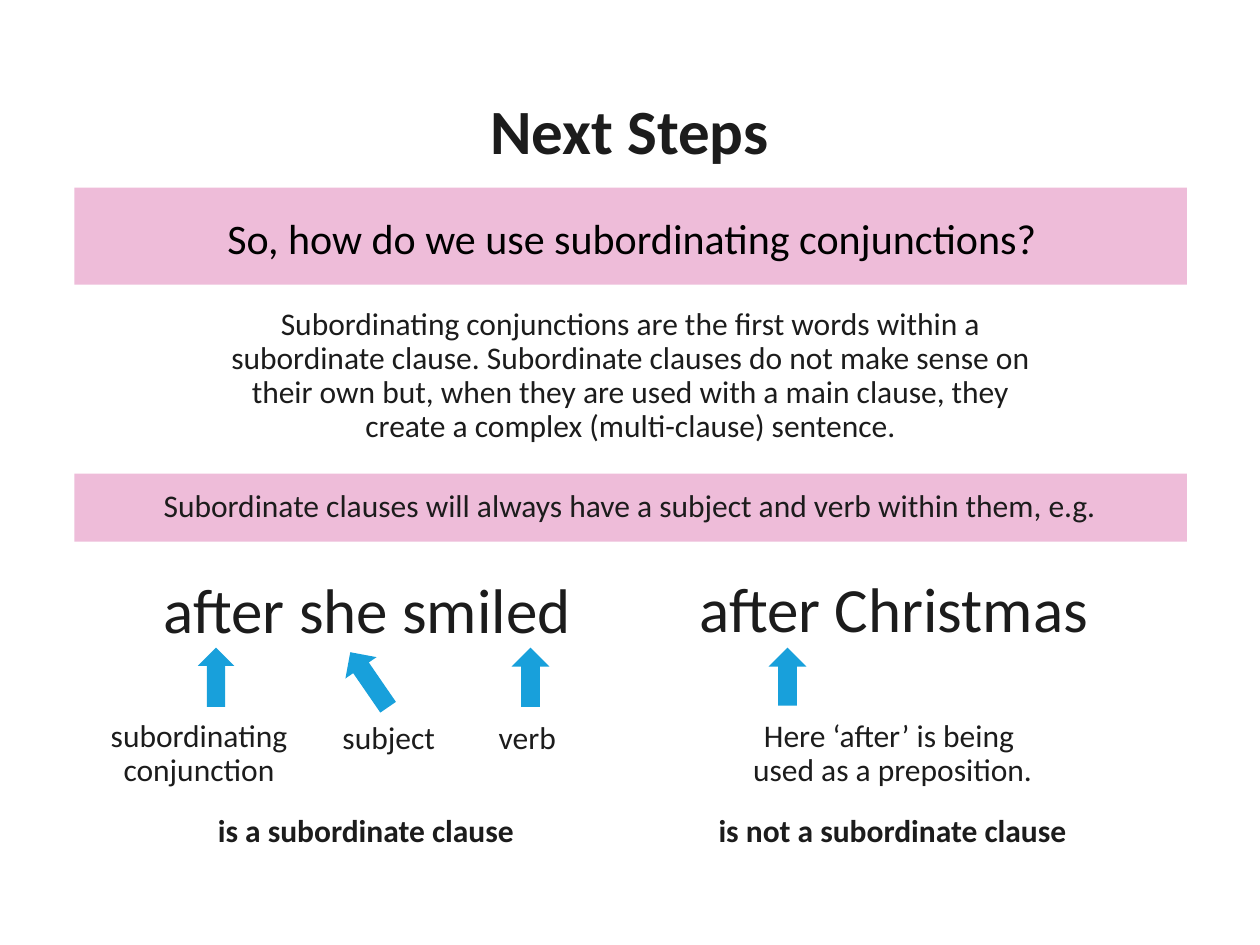
from pptx import Presentation
from pptx.dml.color import RGBColor
from pptx.enum import shapes, text
from pptx.util import Inches, Pt

PINK = RGBColor(0xEE, 0xBC, 0xD9)
BLUE = RGBColor(0x18, 0xA0, 0xDB)
INK = RGBColor(0x1C, 0x1C, 0x1C)
BLACK = RGBColor(0, 0, 0)

presentation = Presentation()
presentation.slide_width = Inches(10)
presentation.slide_height = Inches(7.5)
slide = presentation.slides.add_slide(presentation.slide_layouts[6])


def add_plain_shape(kind, left, top, width, height, color=None):
    """Add a shape without line or shadow, filled only if a colour is given."""
    shape = slide.shapes.add_shape(
        kind, Inches(left), Inches(top), Inches(width), Inches(height))
    shape.shadow.inherit = False
    shape.line.fill.background()
    if color is None:
        shape.fill.background()
    else:
        shape.fill.solid()
        shape.fill.fore_color.rgb = color
    return shape


def add_label(wording, left, top, width, height, size=18, bold=False):
    """Add centred text in an unfilled rounded box."""
    label = add_plain_shape(
        shapes.MSO_SHAPE.ROUNDED_RECTANGLE, left, top, width, height)
    label.adjustments[0] = 0.096
    frame = label.text_frame
    frame.word_wrap = True
    frame.vertical_anchor = text.MSO_ANCHOR.MIDDLE
    frame.margin_left = frame.margin_right = Inches(0.28)
    frame.margin_top = frame.margin_bottom = Inches(0.28)
    frame.text = wording
    paragraph = frame.paragraphs[0]
    paragraph.alignment = text.PP_ALIGN.CENTER
    paragraph.line_spacing = 0.9
    for run in paragraph.runs:
        run.font.name = "Calibri"
        run.font.size = Pt(size)
        run.font.bold = bold
        run.font.color.rgb = INK


# Pink bands behind the question and the rule
for top, height in [(3.76, 0.54), (1.49, 0.77)]:
    add_plain_shape(shapes.MSO_SHAPE.RECTANGLE, 0.59, top, 8.83, height, PINK)

# Question, heading and explanation
question = slide.shapes.add_textbox(
    Inches(0.56), Inches(1.57), Inches(8.91), Inches(0.63))
question.text_frame.word_wrap = True
question.text_frame.vertical_anchor = text.MSO_ANCHOR.MIDDLE
question.text_frame.text = "So, how do we use subordinating conjunctions?"
question_line = question.text_frame.paragraphs[0]
question_line.alignment = text.PP_ALIGN.CENTER
question_line.font.name = "Calibri"
question_line.runs[0].font.name = "Calibri"
question_line.runs[0].font.size = Pt(24)
question_line.runs[0].font.color.rgb = BLACK

add_label("Next Steps", 0.5, 0.52, 8.99, 1.09, size=36, bold=True)
add_label("Subordinating conjunctions are the first words within a subordinate "
          "clause. Subordinate clauses do not make sense on their own but, when "
          "they are used with a main clause, they create a complex "
          "(multi-clause) sentence.", 1.41, 2.36, 7.19, 1.25)
add_label("Subordinate clauses will always have a subject and verb within "
          "them, e.g.", 0.54, 3.82, 8.92, 0.41)

# Two examples side by side, each with its verdict
add_label("after she smiled", 0.83, 4.24, 4.17, 1.25, size=36)
add_label("after Christmas", 5.01, 4.57, 4.17, 0.58, size=36)
add_label("is a subordinate clause", 0.82, 6.39, 4.17, 0.43, bold=True)
add_label("is not a subordinate clause", 5, 6.39, 4.17, 0.43, bold=True)

# Notes on the words, with arrows pointing up at them
word_notes = [
    ("verb", 3.49, 5.6, 1.39, 0.54),
    ("subject", 2.39, 5.6, 1.39, 0.54),
    ("subordinating conjunction", 0.5, 5.72, 2.16, 0.54),
    ("Here ‘after’ is being \vused as a preposition.", 5, 5.77, 4.17, 0.43),
]
arrows = [
    (4.06, 5.14, 0.3, 0.47, 180),
    (2.78, 5.13, 0.3, 0.53, 145.5),
    (1.57, 5.14, 0.29, 0.47, 180),
    (6.1, 5.14, 0.3, 0.46, 180),
]
for note, (left, top, width, height, rotation) in zip(word_notes, arrows):
    add_label(*note)
    arrow = add_plain_shape(
        shapes.MSO_SHAPE.DOWN_ARROW, left, top, width, height, BLUE)
    arrow.rotation = rotation

presentation.save("out.pptx")
